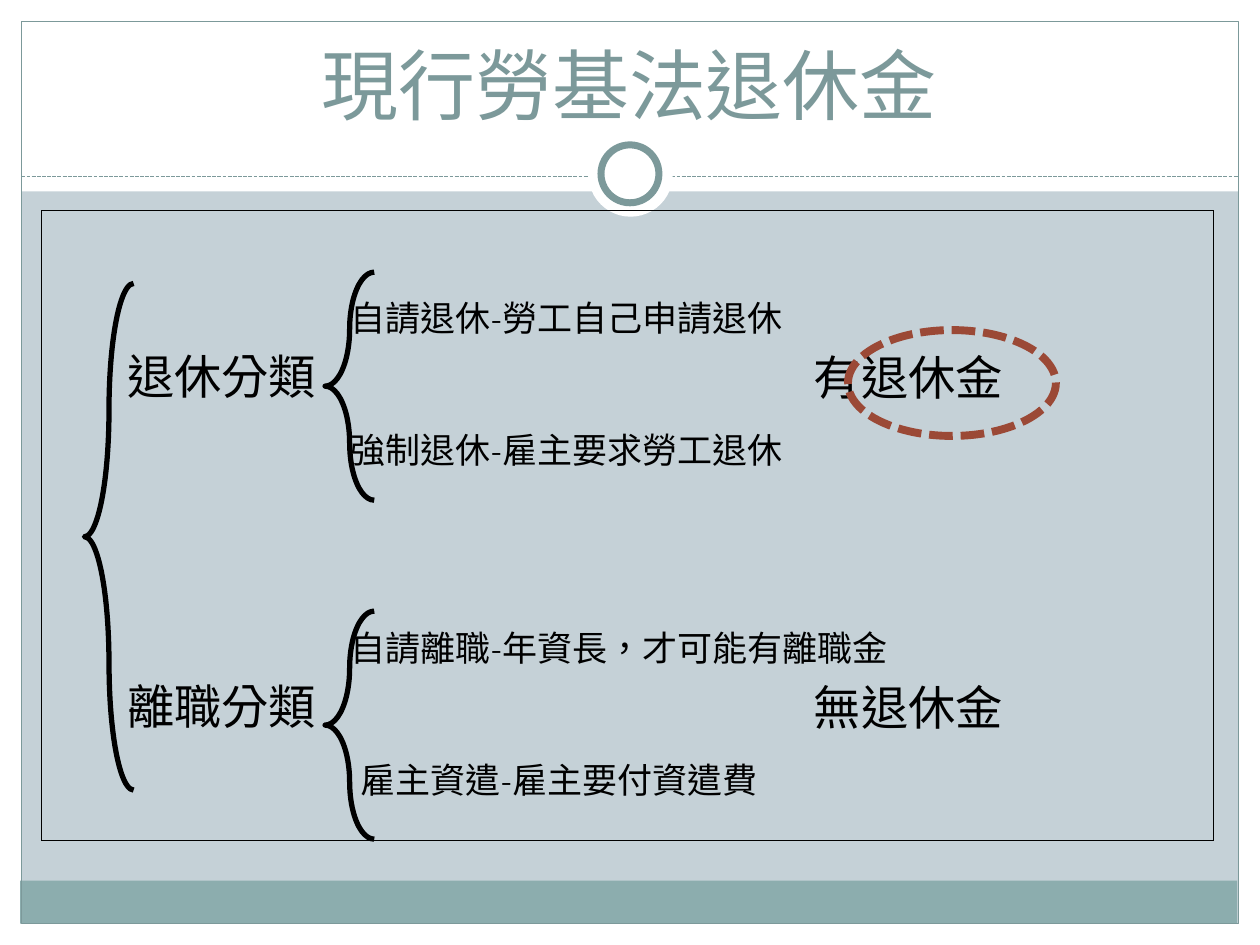
from dataclasses import dataclass

from lxml.etree import SubElement
from pptx import Presentation
from pptx.dml.color import RGBColor
from pptx.enum.dml import MSO_LINE
from pptx.enum.shapes import MSO_CONNECTOR, MSO_SHAPE
from pptx.enum.text import MSO_ANCHOR, MSO_AUTO_SIZE, PP_ALIGN
from pptx.oxml.ns import qn
from pptx.util import Inches, Pt


@dataclass(frozen=True)
class Theme:
    background: str = "C5D1D7"
    white: str = "FFFFFF"
    band: str = "8CADAE"
    accent: str = "7C999A"
    ink: str = "000000"
    highlight: str = "9B4936"
    font: str = "Cambria"
    language: str = "zh-TW"
    title_size: int = 44
    category_size: int = 27
    detail_size: int = 20
    row_pitch: float = 37.7


THEME = Theme()
CATEGORY_INDENT = 0.58
DETAIL_INDENT = 2.35

# Each group: first detail, category, second detail and its indent
GROUPS = [
    ("自請退休-勞工自己申請退休", "退休分類", "強制退休-雇主要求勞工退休", DETAIL_INDENT),
    ("自請離職-年資長，才可能有離職金", "離職分類", "雇主資遣-雇主要付資遣費", 2.43),
]

# Outcome of each group and the top of its label
OUTCOMES = [("有退休金", 2.69), ("無退休金", 5.31)]


def set_attributes(target, values):
    for name, value in values.items():
        setattr(target, name, value)


def place(shape, left, top, width, height):
    box = dict(left=left, top=top, width=width, height=height)
    set_attributes(shape, {name: Inches(value) for name, value in box.items()})


def style_line(line, color, width, dash=None):
    line.color.rgb = RGBColor.from_string(color)
    set_attributes(line, {"width": Pt(width), "dash_style": dash})


def add_figure(slide, kind, box, fill=None, line=None):
    shape = slide.shapes.add_shape(kind, *map(Inches, box))
    shape.shadow.inherit = False
    if fill:
        shape.fill.solid()
        shape.fill.fore_color.rgb = RGBColor.from_string(fill)
    else:
        shape.fill.background()
    if line:
        style_line(shape.line, *line)
    else:
        shape.line.fill.background()
    return shape


def add_brace(slide, left, top, height):
    brace = add_figure(slide, MSO_SHAPE.LEFT_BRACE, (left, top, 0.39, height),
                       line=(THEME.ink, 3))
    brace.adjustments[0] = 2.941
    brace.adjustments[1] = 0.5


def add_text(paragraph, text, size, color):
    run = paragraph.add_run()
    run.text = text
    set_attributes(run.font, {"name": THEME.font, "size": Pt(size)})
    run.font.color.rgb = RGBColor.from_string(color)
    run._r.get_or_add_rPr().set("lang", THEME.language)


def add_row(paragraph, text, size, indent=0, space_before=0):
    set_attributes(paragraph, {
        "alignment": PP_ALIGN.LEFT,
        "line_spacing": Pt(THEME.row_pitch),
        "space_before": Pt(space_before),
    })
    properties = paragraph._p.get_or_add_pPr()
    properties.set("marL", str(Inches(indent)))
    properties.set("indent", "0")
    SubElement(properties, qn("a:buNone"))
    add_text(paragraph, text, size, THEME.ink)


def add_outcome(slide, text, top):
    label = slide.shapes.add_textbox(*map(Inches, (6.46, top, 1.7, 0.52)))
    set_attributes(label.text_frame, {
        "word_wrap": True,
        "margin_left": 0,
        "margin_top": 0,
        "margin_right": 0,
        "margin_bottom": 0,
    })
    add_row(label.text_frame.paragraphs[0], text, THEME.category_size)


def add_frame(slide):
    # White margins and the header
    for box in [(0, 7.33, 10, 0.17), (0, 0, 10, 1.52),
                (0, 0, 0.17, 7.5), (9.83, 0, 0.17, 7.5)]:
        add_figure(slide, MSO_SHAPE.RECTANGLE, box, THEME.white)

    # Footer band and outline
    add_figure(slide, MSO_SHAPE.RECTANGLE, (0.16, 6.99, 9.66, 0.34), THEME.band)
    add_figure(slide, MSO_SHAPE.RECTANGLE, (0.17, 0.17, 9.66, 7.16),
               line=(THEME.accent, 0.75))

    # Dashed divider with its ring
    divider = slide.shapes.add_connector(
        MSO_CONNECTOR.STRAIGHT, *map(Inches, (0.17, 1.4, 9.83, 1.4)))
    style_line(divider.line, THEME.accent, 0.75, MSO_LINE.SQUARE_DOT)
    SubElement(divider._element.spPr, qn("a:effectLst"))
    add_figure(slide, MSO_SHAPE.OVAL, (4.67, 1.05, 0.67, 0.67), THEME.white)
    add_figure(slide, MSO_SHAPE.OVAL, (4.77, 1.15, 0.46, 0.46), THEME.white,
               (THEME.accent, 4))


def fill_title(title):
    place(title, 0.33, 0.25, 9.33, 0.83)
    set_attributes(title.text_frame, {
        "vertical_anchor": MSO_ANCHOR.BOTTOM,
        "auto_size": MSO_AUTO_SIZE.NONE,
    })
    paragraph = title.text_frame.paragraphs[0]
    paragraph.alignment = PP_ALIGN.CENTER
    add_text(paragraph, "現行勞基法退休金", THEME.title_size, THEME.accent)


def fill_body(body):
    place(body, 0.33, 1.67, 9.3, 5)
    style_line(body.line, THEME.ink, 0)
    frame = body.text_frame
    set_attributes(frame, {
        "vertical_anchor": MSO_ANCHOR.TOP,
        "auto_size": MSO_AUTO_SIZE.NONE,
        "margin_top": Inches(0.49),
    })
    paragraph = frame.paragraphs[0]
    for number, (first, category, second, second_indent) in enumerate(GROUPS):
        if number:
            paragraph = frame.add_paragraph()
        add_row(paragraph, first, THEME.detail_size, DETAIL_INDENT,
                space_before=2 * THEME.row_pitch * number)
        add_row(frame.add_paragraph(), category, THEME.category_size, CATEGORY_INDENT)
        add_row(frame.add_paragraph(), second, THEME.detail_size, second_indent)


def main():
    presentation = Presentation()
    set_attributes(presentation, {"slide_width": Inches(10), "slide_height": Inches(7.5)})
    slide = presentation.slides.add_slide(presentation.slide_layouts[1])
    slide.background.fill.solid()
    slide.background.fill.fore_color.rgb = RGBColor.from_string(THEME.background)
    title, body = slide.placeholders

    add_frame(slide)

    # Title and classification text, raised above the frame
    for placeholder in (title, body):
        slide.shapes._spTree.append(placeholder._element)
    fill_title(title)
    fill_body(body)

    # Outcome labels on the right
    for text, top in OUTCOMES:
        add_outcome(slide, text, top)

    # Braces: the whole scheme, then one for each group
    add_brace(slide, 0.67, 2.25, 4.02)
    for top in (2.16, 4.85):
        add_brace(slide, 2.58, top, 1.81)

    # Highlight around the pension outcome
    add_figure(slide, MSO_SHAPE.OVAL, (6.73, 2.62, 1.65, 0.84),
               line=(THEME.highlight, 4.5, MSO_LINE.SQUARE_DOT))

    presentation.save("out.pptx")


if __name__ == "__main__":
    main()
